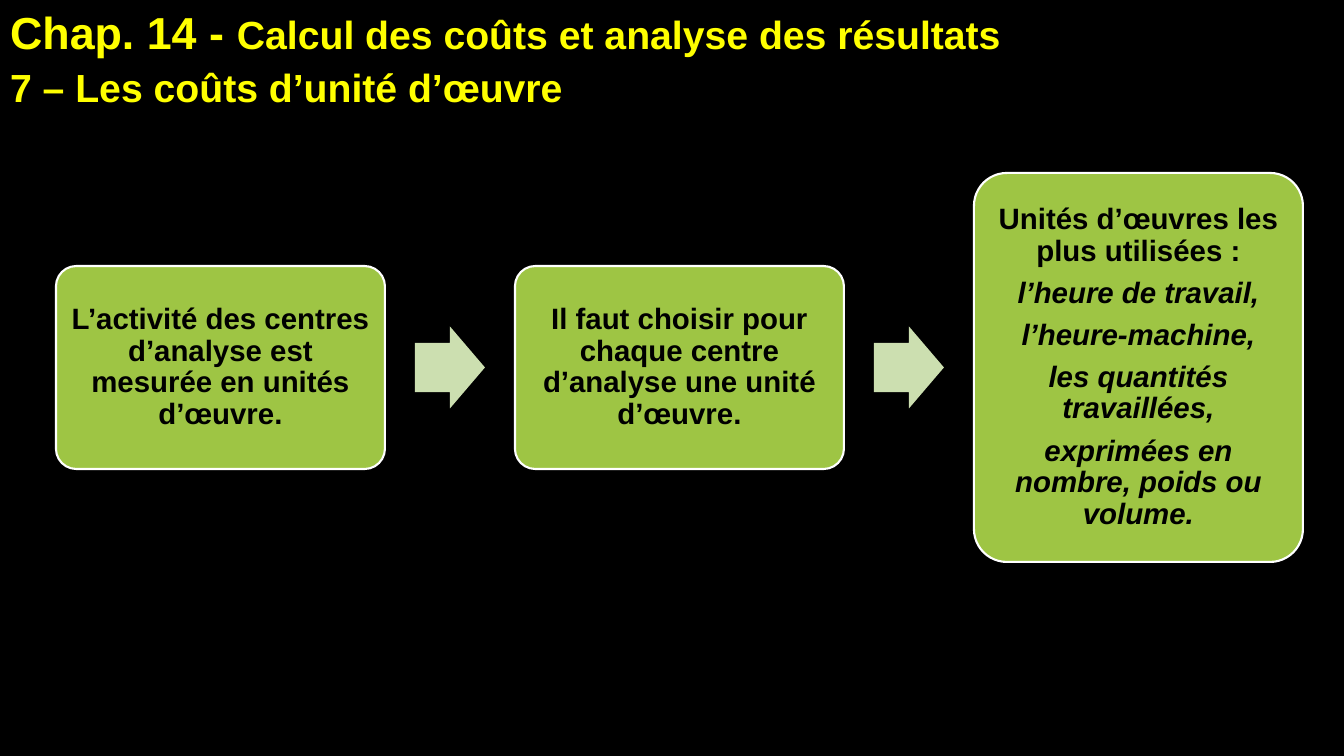
from pptx import Presentation
from pptx import util as u
from pptx.dml.color import RGBColor
from pptx.enum import shapes, text

BLACK = RGBColor(0x00, 0x00, 0x00)
WHITE = RGBColor(0xFF, 0xFF, 0xFF)
YELLOW = RGBColor(0xFF, 0xFF, 0x00)
GREEN = RGBColor(0x9E, 0xC5, 0x44)
PALE_GREEN = RGBColor(0xCC, 0xDF, 0xB0)
FONT = "Arial"
PX_PER_INCH = 100.8

TITLE = [
    [("Chap. 14 - ", 32), ("Calcul des coûts et analyse des résultats", 28)],
    [("7 – Les coûts d’unité d’œuvre", 28)],
]
STEPS = [
    (203, ["L’activité des centres d’analyse est mesurée en unités d’œuvre."]),
    (203, ["Il faut choisir pour chaque centre d’analyse une unité d’œuvre."]),
    (389, ["Unités d’œuvres les plus utilisées :", "l’heure de travail,",
           "l’heure-machine,", "les quantités travaillées,",
           "exprimées en nombre, poids ou volume."]),
]


def px(length):
    return u.Emu(round(length * 914400 / PX_PER_INCH))


def style_span(span, size, color, italic=False):
    span.font.name = FONT
    span.font.size = u.Pt(size)
    span.font.bold = True
    span.font.italic = italic
    span.font.color.rgb = color


def add_block(page, kind, box, fill, adjustments):
    shape = page.shapes.add_shape(kind, *map(px, box))
    shape.shadow.inherit = False
    shape.fill.solid()
    shape.fill.fore_color.rgb = fill
    shape.line.fill.background()
    for index, value in enumerate(adjustments):
        shape.adjustments[index] = value
    return shape


def fill_title(page, box):
    title = page.shapes.title
    title.left, title.top, title.width, title.height = map(px, box)
    frame = title.text_frame
    frame.word_wrap = True
    frame.auto_size = text.MSO_AUTO_SIZE.NONE
    frame.vertical_anchor = text.MSO_ANCHOR.TOP
    frame.text = "\n".join("".join(words for words, size in line) for line in TITLE)
    for para, line in zip(frame.paragraphs, TITLE):
        para.alignment = text.PP_ALIGN.LEFT
        para.space_after = u.Pt(3)
        para.text = ""
        for words, size in line:
            span = para.add_run()
            span.text = words
            style_span(span, size, YELLOW)


def add_step(page, box, lines):
    card = add_block(page, shapes.MSO_SHAPE.ROUNDED_RECTANGLE, box, GREEN, [0.1])
    card.line.color.rgb = WHITE
    card.line.width = u.Pt(1.5)
    frame = card.text_frame
    frame.word_wrap = True
    frame.vertical_anchor = text.MSO_ANCHOR.MIDDLE
    frame.margin_left = frame.margin_right = px(9)
    frame.margin_top = frame.margin_bottom = px(9)
    frame.text = "\n".join(lines)
    for index, para in enumerate(frame.paragraphs):
        para.alignment = text.PP_ALIGN.CENTER
        para.line_spacing = 0.9
        para.space_after = u.Pt(7.35)
        style_span(para.runs[0], 21, BLACK, italic=index > 0)


def add_process(page, box):
    left, top, width, height = box
    card_width, arrow_width, arrow_height = 329, 70, 82
    pitch = (width - card_width) / (len(STEPS) - 1)
    arrow_offset = (card_width + pitch - arrow_width) / 2
    middle = top + height / 2
    for index, (card_height, lines) in enumerate(STEPS):
        x = left + index * pitch
        if index:
            arrow = (x - pitch + arrow_offset, middle - arrow_height / 2,
                     arrow_width, arrow_height)
            add_block(page, shapes.MSO_SHAPE.RIGHT_ARROW, arrow, PALE_GREEN, [0.6, 0.5])
        add_step(page, (x, middle - card_height / 2, card_width, card_height), lines)


def main():
    deck = Presentation()
    deck.slide_width, deck.slide_height = px(1344), px(756)
    page = deck.slides.add_slide(deck.slide_layouts[5])
    page.background.fill.solid()
    page.background.fill.fore_color.rgb = BLACK
    fill_title(page, (0, 0, 1103, 116))
    add_process(page, (56, 173, 1247, 389))
    deck.save("out.pptx")


if __name__ == "__main__":
    main()
